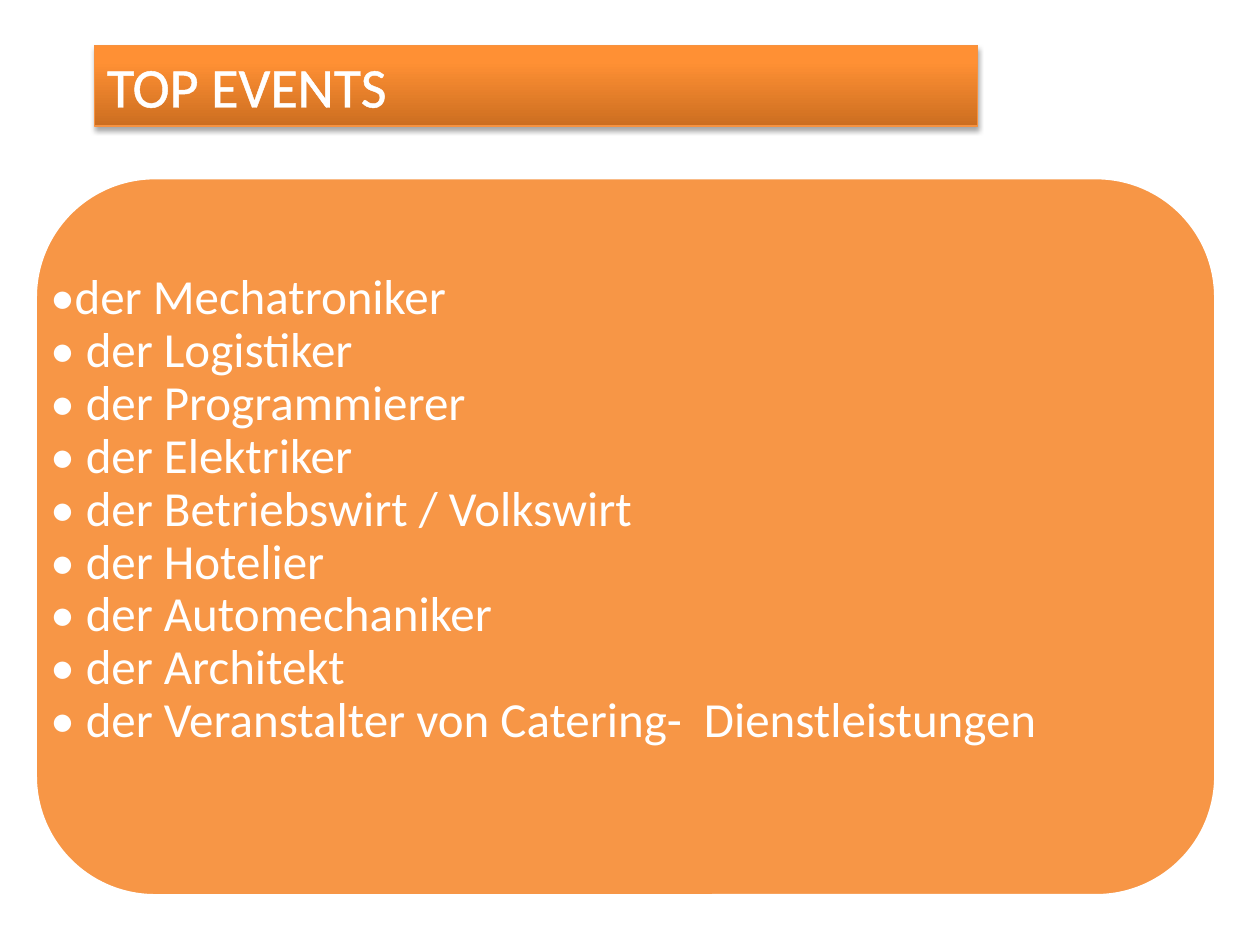
from lxml import etree
from pptx import Presentation
from pptx import util as u
from pptx.dml.color import RGBColor
from pptx.enum import shapes, text
from pptx.oxml.ns import qn

COLORS = {
    "page": "FFFFFF", "text": "FFFFFF", "panel": "F79646", "banner_line": "F69240",
    "dark": "CC6E20", "bright": "FF9034", "top": "FF9136", "shadow": "000000",
}
WIDTH, HEIGHT = 10, 7.5
PANEL = (0.28, 1.41, 9.37, 5.7)
JOBS = [
    "•der Mechatroniker", "• der Logistiker", "• der Programmierer",
    "• der Elektriker", "• der Betriebswirt / Volkswirt", "• der Hotelier",
    "• der Automechaniker", "• der Architekt",
    "• der Veranstalter von Catering-  Dienstleistungen",
]


def color(name):
    """Return the named colour."""
    return RGBColor.from_string(COLORS[name])


def add_child(parent, tag, **attributes):
    """Append a DrawingML element and return it."""
    return etree.SubElement(parent, qn(f"a:{tag}"), attributes)


def add_color(parent, name):
    """Append a named colour element and return it."""
    return add_child(parent, "srgbClr", val=COLORS[name])


def add_box(slide, kind, area, fill, line, line_width):
    """Add a filled preset shape without a shadow."""
    shape = slide.shapes.add_shape(kind, *map(u.Inches, area))
    shape.shadow.inherit = False
    shape.fill.solid()
    shape.fill.fore_color.rgb = color(fill)
    shape.line.color.rgb = color(line)
    shape.line.width = u.Pt(line_width)
    return shape


def add_run(paragraph, words, size):
    """Add a run in the slide's font and text colour."""
    run = paragraph.add_run()
    run.text = words
    run.font.name = "Calibri"
    run.font.size = u.Pt(size)
    run.font.color.rgb = color("text")
    return run


def shade(shape, stops):
    """Fill a shape with a gradient that rises from its lower edge."""
    shape.fill.gradient()
    shape.fill.gradient_angle = 90
    stop_list = shape.element.spPr.find(qn("a:gradFill")).find(qn("a:gsLst"))
    for stop in list(stop_list):
        stop_list.remove(stop)
    for percent, name in stops:
        add_color(add_child(stop_list, "gs", pos=str(percent * 1000)), name)


def cast_shadow(shape):
    """Give a shape a soft shadow below it."""
    effects = shape.element.spPr.find(qn("a:effectLst"))
    shadow = add_child(effects, "outerShdw", blurRad=str(u.Pt(3.1)),
                       dist=str(u.Pt(1.8)), dir="5400000", rotWithShape="0")
    add_child(add_color(shadow, "shadow"), "alpha", val="35000")


def add_banner(slide, title):
    """Add the shaded title banner."""
    banner = add_box(slide, shapes.MSO_SHAPE.RECTANGLE, (0.75, 0.36, 7.01, 0.64),
                     "bright", "banner_line", 0.75)
    shade(banner, [(0, "dark"), (80, "bright"), (100, "top")])
    cast_shadow(banner)
    frame = banner.text_frame
    frame.auto_size = text.MSO_AUTO_SIZE.SHAPE_TO_FIT_TEXT
    frame.vertical_anchor = text.MSO_ANCHOR.TOP
    paragraph = frame.paragraphs[0]
    paragraph.alignment = text.PP_ALIGN.LEFT
    font = add_run(paragraph, title, 32).font
    outline = etree.Element(qn("a:ln"), w=str(u.Pt(1.45)))
    add_color(add_child(outline, "solidFill"), "text")
    font._element.insert(0, outline)


def add_job_list(slide, jobs):
    """Add the rounded panel and the lines of text on it."""
    add_box(slide, shapes.MSO_SHAPE.ROUNDED_RECTANGLE, PANEL, "panel", "page", 2)
    frame = slide.shapes.add_textbox(*map(u.Inches, PANEL)).text_frame
    frame.word_wrap = True
    frame.vertical_anchor = text.MSO_ANCHOR.MIDDLE
    frame.margin_left = frame.margin_right = frame.margin_top = u.Inches(0.12)
    frame.margin_bottom = u.Inches(0.54)
    paragraph = frame.paragraphs[0]
    paragraph.line_spacing = 0.9
    for index, job in enumerate(jobs):
        if index:
            paragraph.add_line_break()
        add_run(paragraph, job, 28)


def main():
    """Build and save the slide."""
    presentation = Presentation()
    presentation.slide_width = u.Inches(WIDTH)
    presentation.slide_height = u.Inches(HEIGHT)
    slide = presentation.slides.add_slide(presentation.slide_layouts[6])
    add_banner(slide, "TOP EVENTS")
    add_job_list(slide, JOBS)
    presentation.save("out.pptx")


if __name__ == "__main__":
    main()
